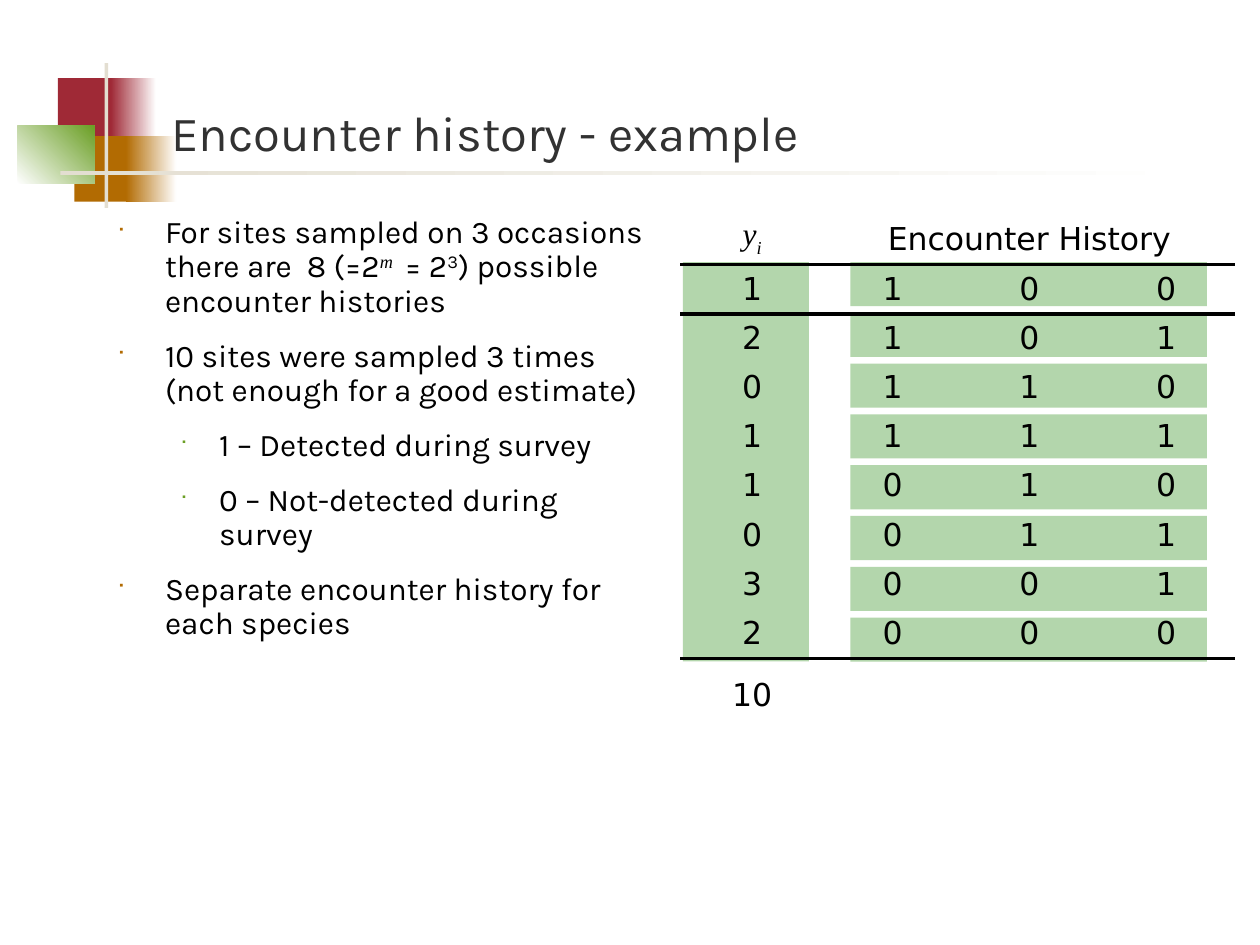
from dataclasses import dataclass

from lxml.etree import SubElement
from pptx import Presentation
from pptx.dml.color import RGBColor
from pptx.enum.shapes import MSO_SHAPE
from pptx.enum.text import MSO_ANCHOR, MSO_AUTO_SIZE, PP_ALIGN
from pptx.oxml.ns import qn
from pptx.util import Inches, Pt


@dataclass(frozen=True)
class Theme:
    red: str = "9F2936"
    amber: str = "B26B02"
    green: str = "6B9F25"
    sand: str = "E3DED1"
    mint: str = "B3D6AC"
    white: str = "FFFFFF"
    black: str = "000000"
    grey: str = "323232"
    head: int = 28
    text: int = 18
    rule: float = 2.25
    main: str = "Karla"
    math: str = "Times New Roman"
    data: str = "DejaVu Sans"
    mark: str = "Wingdings"
    plain: str = "{2D5ABB26-0587-4C30-8999-92F81FD0307C}"  # no style, no grid


def apply(obj, form):
    for name, value in form.items():
        setattr(obj, name, value)


class Deck:
    """Places elements on a grid of 100 columns by 75 rows."""

    def __init__(self, theme):
        self.theme = theme
        self.prs = Presentation()
        apply(self.prs, {"slide_width": Inches(10), "slide_height": Inches(7.5)})
        self.slide = self.prs.slides.add_slide(self.prs.slide_layouts[1])
        self.unit = self.prs.slide_width / 100

    def span(self, *cells):
        return [round(c * self.unit) for c in cells]

    def block(self, box, color, end=None, angle=0):
        shape = self.slide.shapes.add_shape(MSO_SHAPE.RECTANGLE, *self.span(*box))
        shape.shadow.inherit = False
        shape.line.fill.background()
        fill = shape.fill
        if end is None:
            fill.solid()
            fill.fore_color.rgb = RGBColor.from_string(color)
            return
        fill.gradient()
        fill.gradient_angle = angle
        for stop, tone in zip(fill.gradient_stops, (color, end)):
            stop.color.rgb = RGBColor.from_string(tone)

    def words(self, para, runs, size, color):
        """Each run is (text, font) or (text, font, baseline, italic)."""
        for text, face, *rest in runs:
            if text == "\n":
                para.add_line_break()
                continue
            base, italic = rest or (0, False)
            run = para.add_run()
            run.text = text
            apply(run.font, {"name": face, "size": Pt(size), "italic": italic})
            run.font.color.rgb = RGBColor.from_string(color)
            if base:
                run._r.get_or_add_rPr().set("baseline", str(base * 1000))

    def holder(self, index, box, anchor):
        """Move a template placeholder to its box and to the front."""
        shape = self.slide.placeholders[index]
        apply(shape, dict(zip(("left", "top", "width", "height"), self.span(*box))))
        self.slide.shapes._spTree.append(shape._element)
        frame = shape.text_frame
        apply(frame, {"auto_size": MSO_AUTO_SIZE.NONE, "word_wrap": True,
                      "vertical_anchor": anchor})
        return frame

    def title(self, text, box):
        para = self.holder(0, box, MSO_ANCHOR.BOTTOM).paragraphs[0]
        apply(para, {"alignment": PP_ALIGN.LEFT, "space_before": Pt(12)})
        self.words(para, [(text, self.theme.main)], self.theme.head, self.theme.grey)

    def bullets(self, items, box):
        frame = self.holder(1, box, MSO_ANCHOR.TOP)
        looks = [(0.38, 0.38, self.theme.amber, 60), (0.81, 0.31, self.theme.green, 55)]
        for i, (level, runs) in enumerate(items):
            para = frame.add_paragraph() if i else frame.paragraphs[0]
            apply(para, {"level": level, "line_spacing": 0.9, "space_before": Pt(12),
                         "alignment": PP_ALIGN.LEFT})
            left, hang, color, share = looks[level]
            props = para._p.get_or_add_pPr()
            props.set("marL", str(Inches(left)))
            props.set("indent", str(-Inches(hang)))
            tint = SubElement(props, qn("a:buClr"))
            SubElement(tint, qn("a:srgbClr"), val=color)
            SubElement(props, qn("a:buSzPct"), val=str(share * 1000))
            SubElement(props, qn("a:buFont"), typeface=self.theme.mark)
            SubElement(props, qn("a:buChar"), char="■")
            self.words(para, runs, self.theme.text, self.theme.black)

    def edge(self, cell, side):
        line = SubElement(cell._tc.get_or_add_tcPr(), qn("a:" + side),
                          w=str(Pt(self.theme.rule)))
        fill = SubElement(line, qn("a:solidFill"))
        SubElement(fill, qn("a:srgbClr"), val=self.theme.black)

    def table(self, rows, box, widths, heights, ruled):
        """Rows hold lists of runs; a rule is drawn under each ruled row."""
        shape = self.slide.shapes.add_table(len(rows), len(widths), *self.span(*box))
        grid = shape.table
        apply(grid, {"first_row": False, "horz_banding": False})
        grid._tbl.tblPr.find(qn("a:tableStyleId")).text = self.theme.plain
        for col, width in zip(grid.columns, self.span(*widths)):
            col.width = width
        for row, height in zip(grid.rows, self.span(*heights)):
            row.height = height
        for r, row in enumerate(rows):
            for c in range(len(widths)):
                cell = grid.cell(r, c)
                cell.vertical_anchor = MSO_ANCHOR.MIDDLE if r else MSO_ANCHOR.BOTTOM
                if r - 1 in ruled:
                    self.edge(cell, "lnT")
                if r in ruled:
                    self.edge(cell, "lnB")
                cell.fill.background()
                if c < len(row):
                    para = cell.text_frame.paragraphs[0]
                    para.alignment = PP_ALIGN.CENTER
                    self.words(para, row[c], self.theme.text, self.theme.black)
        grid.cell(0, 1).merge(grid.cell(0, len(widths) - 1))


def main():
    look = Theme()
    deck = Deck(look)

    # Corner ornament and title rule
    deck.block((4.6, 6.2, 4.8, 5.2), look.red)
    deck.block((8.8, 6.2, 3.6, 5.2), look.red, look.white)
    deck.block((5.9, 10.8, 4.6, 5.2), look.amber)
    deck.block((10, 10.8, 4, 5.2), look.amber, look.white)
    deck.block((1.4, 10, 6.1, 4.6), look.white, look.green, 45)
    deck.block((8.3, 5, 0.3, 11.5), look.sand)
    deck.block((4.8, 13.6, 90, 0.3), look.sand, look.white)

    # Green bands behind the table
    for i in range(8):
        deck.block((67.5, 20.8 + 4.03 * i, 28.3, 3.5), look.mint)
    deck.block((54.2, 20.8, 10, 31.7), look.mint)

    # Title and list
    deck.title("Encounter history - example", (12.6, 2.3, 85.2, 11))
    face = look.main
    deck.bullets([
        (0, [("For sites sampled on 3 occasions there are  8 (=2", face),
             ("m ", look.math, 30, True), (" = 2", face), ("3", face, 30, False),
             (") possible encounter histories", face)]),
        (0, [("10 sites were sampled 3 times", face), ("\n", face),
             ("(not enough for a good estimate)", face)]),
        (1, [("1 – Detected during survey", face)]),
        (1, [("0 – Not-detected during survey", face)]),
        (0, [("Separate encounter history for each species", face)]),
    ], (8.3, 16.7, 44, 50.4))

    # Encounter table: count, then three occasions
    header = [[("y", look.math, 0, True), ("i", look.math, -30, True)],
              [("Encounter History", look.data)]]
    counts = ["1100", "2101", "0110", "1111", "1010", "0011", "3001", "2000"]
    body = [[[(digit, look.data)] for digit in line] for line in counts]
    total = [[("10", look.data)]]
    deck.table([header, *body, total], (54, 16.7, 44, 41.5),
               [11.4, 10.9, 10.8, 10.9], [4.3] + [3.9] * 8 + [6], ruled=(0, 8))

    deck.prs.save("out.pptx")


if __name__ == "__main__":
    main()
